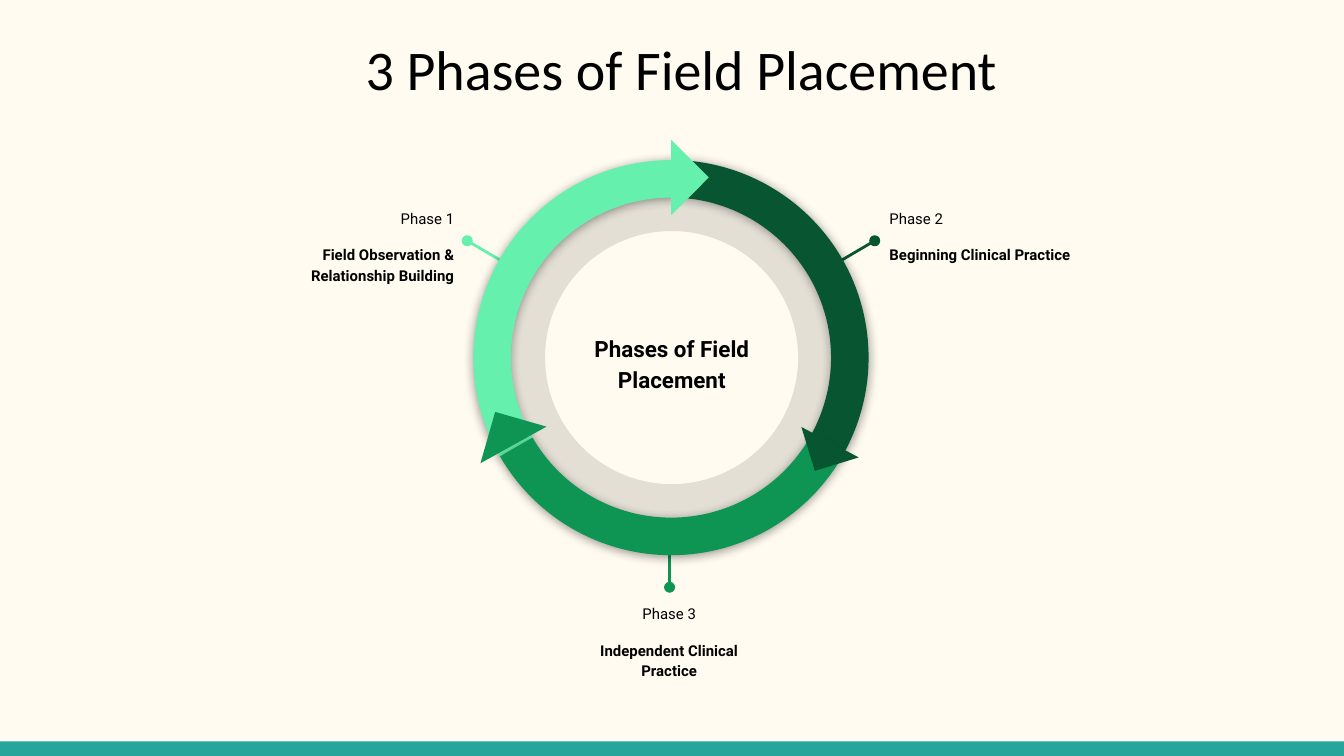
from dataclasses import dataclass
from math import cos, radians, sin

from lxml.etree import SubElement
from pptx import Presentation
from pptx.dml.color import RGBColor
from pptx.enum.shapes import MSO_CONNECTOR, MSO_SHAPE
from pptx.enum.text import MSO_ANCHOR, PP_ALIGN
from pptx.oxml.ns import qn
from pptx.util import Pt


@dataclass(frozen=True)
class Theme:
    background: str = "FFFBF0"
    bar: str = "26A69A"
    text: str = "000000"
    light: str = "65F0AD"
    dark: str = "085631"
    medium: str = "0E9453"
    title_font: str = "Calibri"
    body_font: str = "Roboto"
    title_size: float = 30
    center_size: float = 12
    label_size: float = 8


class SlideBuilder:
    def __init__(self, slide, theme):
        self.slide = slide
        self.theme = theme
        background = slide.background.fill
        background.solid()
        background.fore_color.rgb = RGBColor.from_string(theme.background)

    def shape(self, kind, left, top, width, height, color, rotation=0, adjustments=()):
        shape = self.slide.shapes.add_shape(
            kind, Pt(left), Pt(top), Pt(width), Pt(height))
        shape.shadow.inherit = False
        shape.fill.solid()
        shape.fill.fore_color.rgb = RGBColor.from_string(color)
        shape.line.fill.background()
        shape.rotation = rotation
        for index, value in enumerate(adjustments):
            shape.adjustments[index] = value
        return shape

    def centered(self, kind, x, y, size, color, **options):
        """Add a square shape around the point x, y."""
        return self.shape(kind, x - size / 2, y - size / 2, size, size, color, **options)

    def fade(self, shape, percent):
        """Set the opacity of a solid fill."""
        color = shape.fill._xPr.find(qn("a:solidFill"))[0]
        SubElement(color, qn("a:alpha"), val=str(percent * 1000))

    def drop_shadow(self, shape):
        effects = shape._element.spPr.find(qn("a:effectLst"))
        shadow = SubElement(
            effects, qn("a:outerShdw"), blurRad=str(Pt(5.6)), dist=str(Pt(0.8)),
            dir="5400000", algn="bl", rotWithShape="0")
        color = SubElement(shadow, qn("a:srgbClr"), val="000000")
        SubElement(color, qn("a:alpha"), val="40000")

    def stem(self, start, end, color):
        """Add a line with a dot at its start."""
        line = self.slide.shapes.add_connector(
            MSO_CONNECTOR.STRAIGHT, *(Pt(value) for value in (*start, *end)))
        line.line.color.rgb = RGBColor.from_string(color)
        line.line.width = Pt(1.5)
        SubElement(line.line._get_or_add_ln(), qn("a:headEnd"), type="oval")
        SubElement(line._element.spPr, qn("a:effectLst"))

    def text(self, box, lines, size, font, align=PP_ALIGN.CENTER,
             anchor=MSO_ANCHOR.TOP, spacing=1.15, gap=0):
        """Add a text box; lines holds pairs of wording and boldness."""
        frame = self.slide.shapes.add_textbox(*(Pt(value) for value in box)).text_frame
        frame.word_wrap = True
        frame.vertical_anchor = anchor
        frame.margin_left = frame.margin_right = Pt(7.2)
        frame.margin_top = frame.margin_bottom = Pt(7.2)
        for index, (wording, bold) in enumerate(lines):
            paragraph = frame.add_paragraph() if index else frame.paragraphs[0]
            paragraph.text = wording
            paragraph.alignment = align
            paragraph.line_spacing = spacing
            paragraph.space_before = Pt(gap if index else 0)
            paragraph.font.name = font
            paragraph.font.size = Pt(size)
            paragraph.font.bold = bold
            paragraph.font.color.rgb = RGBColor.from_string(self.theme.text)


def main():
    theme = Theme()
    presentation = Presentation()
    presentation.slide_width, presentation.slide_height = Pt(720), Pt(405)
    builder = SlideBuilder(
        presentation.slides.add_slide(presentation.slide_layouts[6]), theme)

    builder.shape(MSO_SHAPE.RECTANGLE, 0, 397.2, 720, 7.8, theme.bar)
    builder.text((29.5, 11.5, 671, 48.2), [("3 Phases of Field Placement", False)],
                 theme.title_size, theme.title_font, spacing=1)

    center_x, center_y = 359.5, 191.6
    inner_ring = builder.centered(MSO_SHAPE.DONUT, center_x + 0.3, center_y, 200,
                                  theme.text, adjustments=[0.161])
    builder.fade(inner_ring, 11)

    # label, description, colour, stem start, stem end, text corner, alignment
    phases = [
        ("Phase 1", "Field Observation & Relationship Building", theme.light,
         (250.3, 129), (284.4, 149), (132.5, 103.7), PP_ALIGN.RIGHT),
        ("Phase 2", "Beginning Clinical Practice", theme.dark,
         (468.6, 129), (434.5, 149), (469.4, 103.7), PP_ALIGN.LEFT),
        ("Phase 3", "Independent Clinical Practice", theme.medium,
         (358.7, 314.6), (358.7, 278.6), (299.5, 315.4), PP_ALIGN.CENTER),
    ]
    for label, description, color, start, end, corner, align in phases:
        builder.stem(start, end, color)
        builder.text((*corner, 118, 52.5), [(label, False), (description, True)],
                     theme.label_size, theme.body_font, align, gap=8.5)

    builder.text((303, 162, 113.8, 63.4), [("Phases of Field Placement", True)],
                 theme.center_size, theme.body_font, anchor=MSO_ANCHOR.MIDDLE)

    # Each arc spans 120 degrees, from 240 to 0 before its rotation.
    arc_start = 240 * 60000 / 100000
    for color, rotation in ((theme.dark, 30), (theme.light, 270), (theme.medium, 150)):
        arc = builder.centered(MSO_SHAPE.BLOCK_ARC, center_x, center_y, 211.7, color,
                               rotation=rotation, adjustments=[arc_start, 0, 0.095])
        builder.drop_shadow(arc)

    # Arrowheads sit on the ring and point clockwise.
    head_radius = 96.5
    for color, angle, size in ((theme.light, -90, 28.6), (theme.dark, 28, 24.6),
                               (theme.medium, 151, 28.6)):
        builder.centered(MSO_SHAPE.RIGHT_TRIANGLE,
                         center_x + head_radius * cos(radians(angle)),
                         center_y + head_radius * sin(radians(angle)),
                         size, color, rotation=angle + 315)

    presentation.save("out.pptx")


if __name__ == "__main__":
    main()
